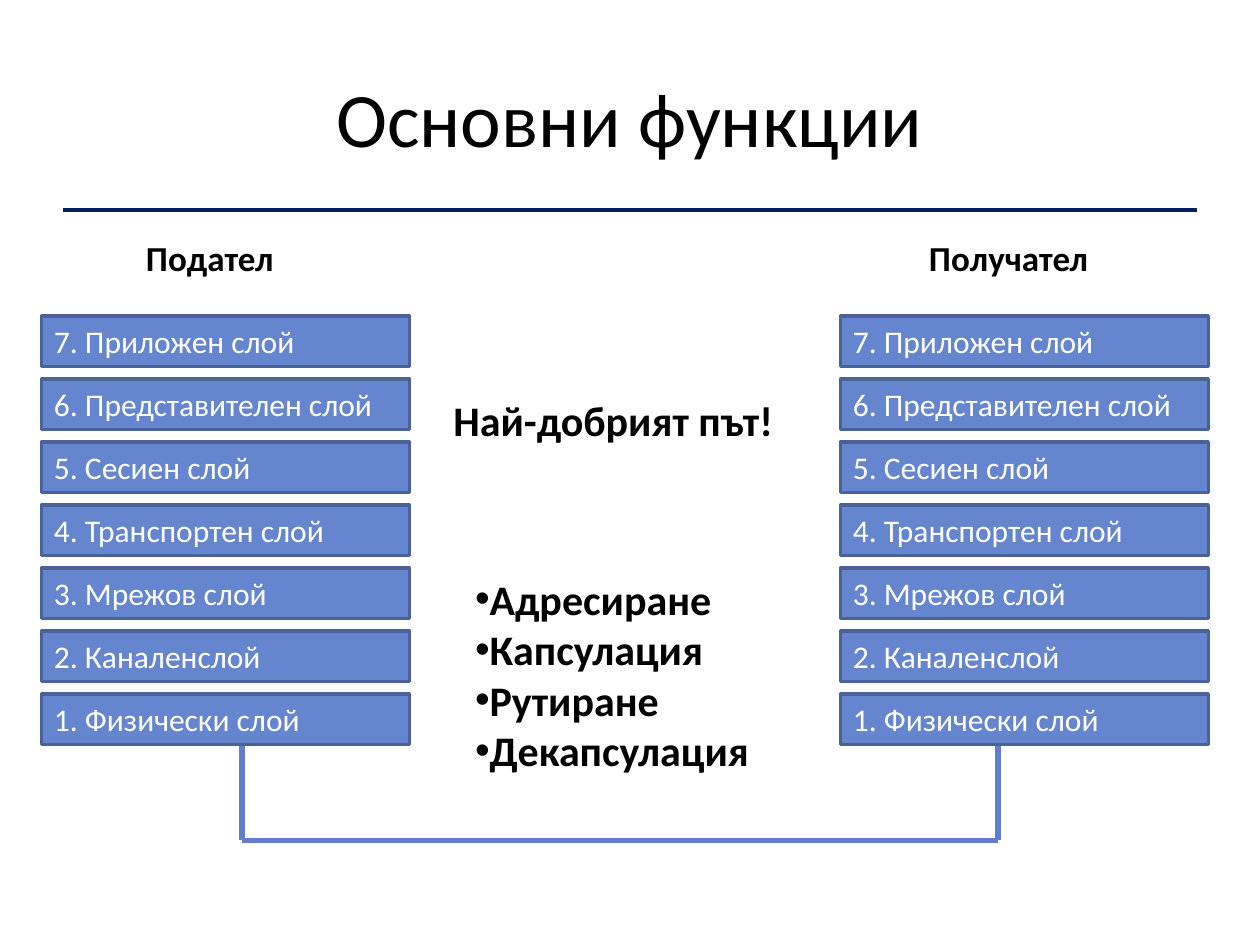
from lxml.etree import SubElement
from pptx import Presentation
from pptx.dml.color import RGBColor
from pptx.enum.shapes import MSO_CONNECTOR as Connector, MSO_SHAPE as Shape
from pptx.enum.text import MSO_ANCHOR as Anchor, MSO_AUTO_SIZE as AutoSize, PP_ALIGN as Align
from pptx.oxml.ns import qn
from pptx.util import Inches, Pt

# Content
TITLE = "Основни функции"
LAYERS = ["Приложен слой", "Представителен слой", "Сесиен слой", "Транспортен слой",
          "Мрежов слой", "Каналенслой", "Физически слой"]
STACKS = [  # heading, heading left, stack left
    ("Подател", 0.83, 0.33),
    ("Получател", 7.17, 6.67),
]
SLOGAN = "Най-добрият път!"
FUNCTIONS = ["Адресиране", "Капсулация", "Рутиране", "Декапсулация"]

# Style and layout
FONT = "Calibri"
COLORS = {"text": "000000", "rule": "002060", "layer": "6585CF",
          "border": "4B6299", "layer_text": "FFFFFF", "link": "617DCD"}
LAYER_TOP, LAYER_PITCH, LAYER_WIDTH, LAYER_HEIGHT = 2.51, 0.5, 2.92, 0.4
LINK_PATH = [(1.92, 5.92), (1.92, 6.67), (7.92, 6.67), (7.92, 5.92)]


def color(name):
    return RGBColor.from_string(COLORS[name])


def place(shape, *box):
    shape.left, shape.top, shape.width, shape.height = map(Inches, box)


def write(paragraph, text, size, tint="text", bold=False, align=Align.LEFT):
    paragraph.alignment = align
    run = paragraph.add_run()
    run.text = text
    run.font.name, run.font.size, run.font.bold = FONT, Pt(size), bold
    run.font.color.rgb = color(tint)


def add_label(slide, text, box, size, align=Align.LEFT):
    frame = slide.shapes.add_textbox(*map(Inches, box)).text_frame
    frame.word_wrap = True
    write(frame.paragraphs[0], text, size, bold=True, align=align)


def add_line(slide, start, end, tint, width):
    line = slide.shapes.add_connector(Connector.STRAIGHT, *map(Inches, start + end))
    line.line.color.rgb = color(tint)
    line.line.width = Pt(width)
    SubElement(line._element.spPr, qn("a:effectLst"))


def add_layer(slide, text, left, top):
    layer = slide.shapes.add_shape(
        Shape.RECTANGLE, *map(Inches, (left, top, LAYER_WIDTH, LAYER_HEIGHT)))
    layer.shadow.inherit = False
    layer.fill.solid()
    layer.fill.fore_color.rgb = color("layer")
    layer.line.color.rgb = color("border")
    layer.line.width = Pt(2)
    layer.text_frame.vertical_anchor = Anchor.TOP
    layer.text_frame.word_wrap = True
    write(layer.text_frame.paragraphs[0], text, 18, "layer_text")


def fill_functions(body):
    place(body, 3.67, 4.5, 2.83, 1.72)
    frame = body.text_frame
    frame.auto_size = AutoSize.NONE
    for i, function in enumerate(FUNCTIONS):
        paragraph = frame.add_paragraph() if i else frame.paragraphs[0]
        paragraph.space_before = Pt(0)
        write(paragraph, function, 24, bold=True)
        props = paragraph._p.get_or_add_pPr()
        props.set("marL", "0")
        props.set("indent", "0")
        SubElement(props, qn("a:buFont")).set("typeface", "Arial")
        SubElement(props, qn("a:buChar")).set("char", "•")


def main():
    prs = Presentation()
    prs.slide_width, prs.slide_height = Inches(10), Inches(7.5)
    slide = prs.slides.add_slide(prs.slide_layouts[1])

    # Title and rule
    title = slide.shapes.title
    place(title, 0.5, 0.3, 9, 1.25)
    title.text_frame.vertical_anchor = Anchor.MIDDLE
    write(title.text_frame.paragraphs[0], TITLE, 44, align=Align.CENTER)
    add_line(slide, (0.5, 1.67), (9.5, 1.67), "rule", 2.25)

    # Sender and receiver stacks, numbered from the top down
    for heading, heading_left, stack_left in STACKS:
        add_label(slide, heading, (heading_left, 1.83, 1.67, 0.44), 20, Align.CENTER)
        for i, name in enumerate(LAYERS):
            add_layer(slide, f"{len(LAYERS) - i}. {name}",
                      stack_left, LAYER_TOP + i * LAYER_PITCH)

    # Link between the physical layers
    for start, end in zip(LINK_PATH, LINK_PATH[1:]):
        add_line(slide, start, end, "link", 3)

    # Network layer functions
    fill_functions(slide.placeholders[1])
    add_label(slide, SLOGAN, (3.5, 3.08, 2.83, 0.5), 24)

    prs.save("out.pptx")


if __name__ == "__main__":
    main()
